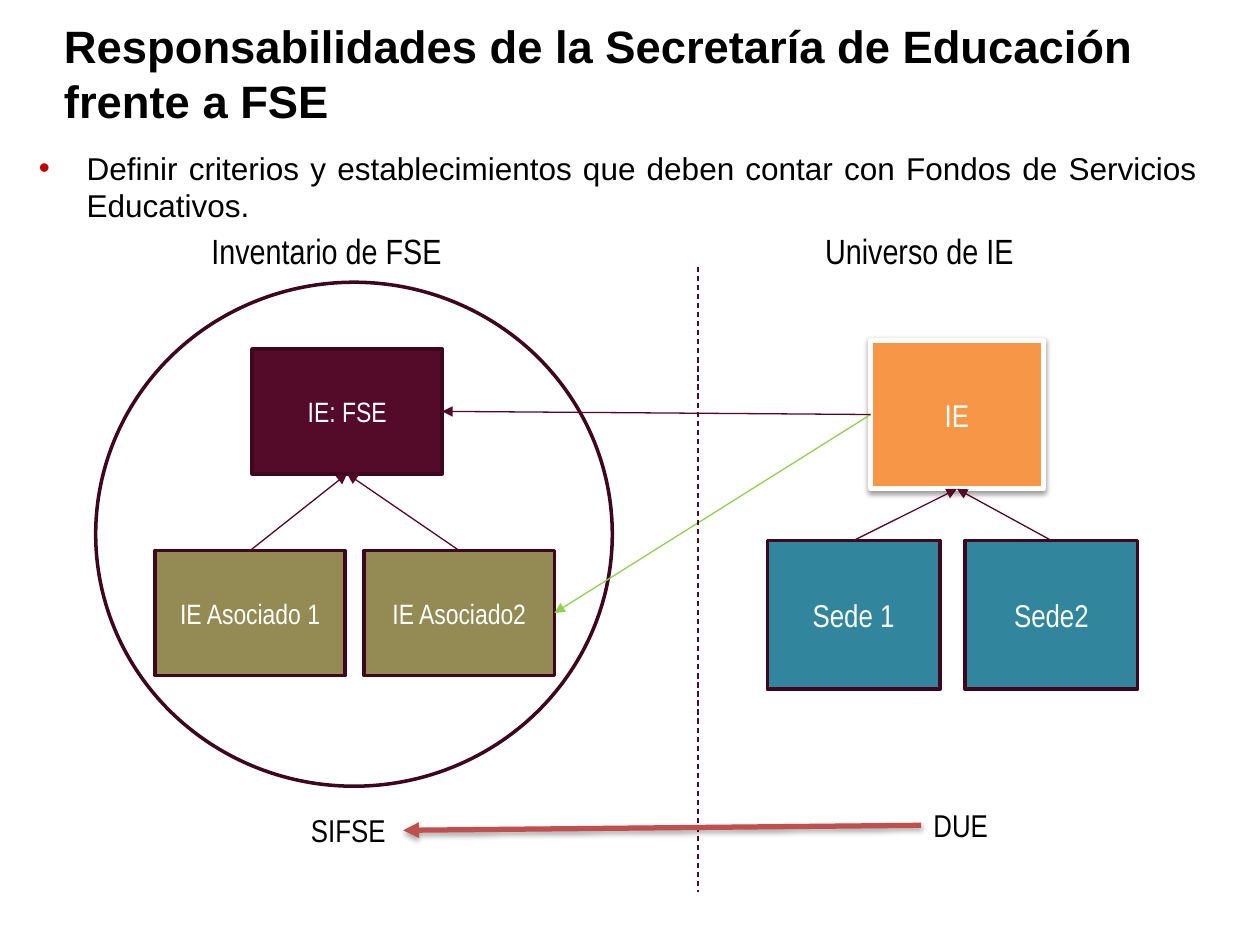
from lxml.etree import SubElement
from pptx import Presentation
from pptx.dml.color import RGBColor
from pptx.enum.dml import MSO_LINE
from pptx.enum.shapes import MSO_CONNECTOR, MSO_SHAPE
from pptx.enum.text import MSO_ANCHOR, PP_ALIGN
from pptx.oxml.ns import qn
from pptx.util import Inches, Pt

COLORS = {
    "black": "000000", "white": "FFFFFF", "bullet": "C00000",
    "wine": "540A29", "outline": "3E071E", "arrow": "540828",
    "olive": "948A54", "orange": "F79646", "teal": "31859C",
    "green": "92D050", "red": "C0504D",
}
TITLE = "Responsabilidades de la Secretaría de Educación frente a FSE"
CRITERIA = ("Definir criterios y establecimientos que deben contar con "
            "Fondos de Servicios Educativos.")

FUND_SIZE, SITE_SIZE = (1.51, 0.99), (1.37, 1.18)
# name: (text, left, top, size, fill, outline, outline width, font size)
BOXES = {
    "fund": ("IE: FSE", 2, 2.77, FUND_SIZE, "wine", "outline", 2, 16),
    "associate 2": ("IE Asociado2", 2.89, 4.37, FUND_SIZE, "olive", "outline", 2, 16),
    "associate 1": ("IE Asociado 1", 1.23, 4.37, FUND_SIZE, "olive", "outline", 2, 16),
    "school": ("IE", 6.91, 2.7, SITE_SIZE, "orange", "white", 3, 18),
    "site 1": ("Sede 1", 6.09, 4.29, SITE_SIZE, "teal", "outline", 2, 18),
    "site 2": ("Sede2", 7.66, 4.29, SITE_SIZE, "teal", "outline", 2, 18),
}
TOP, LEFT, BOTTOM, RIGHT = range(4)  # connection sites of a rectangle
LINKS = [
    ("associate 1", TOP, "fund", BOTTOM, "arrow"),
    ("associate 2", TOP, "fund", BOTTOM, "arrow"),
    ("school", LEFT, "associate 2", RIGHT, "green"),
    ("school", LEFT, "fund", RIGHT, "arrow"),
    ("site 1", TOP, "school", BOTTOM, "arrow"),
    ("site 2", TOP, "school", BOTTOM, "arrow"),
]
LABELS = [  # text, left, top, width, height, font size
    ("Universo de IE", 6.45, 1.77, 1.72, 0.44, 20),
    ("Inventario de FSE", 1.58, 1.77, 2.06, 0.44, 20),
    ("SIFSE", 2.37, 6.39, 0.83, 0.4, 18),
    ("DUE", 7.31, 6.35, 1.02, 0.4, 18),
]


def color(name):
    return RGBColor.from_string(COLORS[name])


def set_font(paragraph, name, size, shade="black", bold=False):
    font = paragraph.font
    font.name, font.size, font.bold = name, Pt(size), bold
    font.color.rgb = color(shade)


def set_line(shape, shade, width):
    shape.line.color.rgb = color(shade)
    shape.line.width = Pt(width)


def add_shadow(shape, opacity, distance):
    """Give the shape a soft shadow straight below it."""
    properties = shape._element.spPr
    effects = properties.find(qn("a:effectLst"))
    if effects is None:
        effects = SubElement(properties, qn("a:effectLst"))
    shadow = SubElement(effects, qn("a:outerShdw"), blurRad=str(Pt(3.1)),
                        dist=str(Pt(distance)), dir="5400000", rotWithShape="0")
    shade = SubElement(shadow, qn("a:srgbClr"), val=COLORS["black"])
    SubElement(shade, qn("a:alpha"), val=str(opacity * 1000))


def add_text(page, text, left, top, width, height):
    box = page.shapes.add_textbox(*map(Inches, (left, top, width, height)))
    box.text_frame.word_wrap = True
    para = box.text_frame.paragraphs[0]
    para.text = text
    return box, para


def add_bullet(para):
    properties = para._p.get_or_add_pPr()
    properties.set("marL", str(Inches(0.38)))
    properties.set("indent", str(Inches(-0.38)))
    bullet_color = SubElement(properties, qn("a:buClr"))
    SubElement(bullet_color, qn("a:srgbClr"), val=COLORS["bullet"])
    SubElement(properties, qn("a:buFont"), typeface="Arial")
    SubElement(properties, qn("a:buChar"), char="•")


def add_box(page, text, left, top, size, fill, outline, width, font_size):
    box = page.shapes.add_shape(MSO_SHAPE.RECTANGLE, *map(Inches, (left, top, *size)))
    box.shadow.inherit = False
    box.fill.solid()
    box.fill.fore_color.rgb = color(fill)
    set_line(box, outline, width)
    frame = box.text_frame
    frame.word_wrap = True
    frame.vertical_anchor = MSO_ANCHOR.MIDDLE
    frame.margin_left = frame.margin_right = Inches(0.07)
    frame.margin_top = frame.margin_bottom = Inches(0.04)
    para = frame.paragraphs[0]
    para.text = text
    para.alignment = PP_ALIGN.CENTER
    set_font(para, "Arial Narrow", font_size, "white")
    return box


def add_line(page, shade, width, start=(0, 0), end=(0, 0), arrow=True):
    line = page.shapes.add_connector(MSO_CONNECTOR.STRAIGHT, *map(Inches, (*start, *end)))
    set_line(line, shade, width)
    if arrow:
        SubElement(line.line._get_or_add_ln(), qn("a:tailEnd"), type="triangle")
    SubElement(line._element.spPr, qn("a:effectLst"))
    return line


def main():
    deck = Presentation()
    deck.slide_width, deck.slide_height = Inches(10), Inches(7.5)
    page = deck.slides.add_slide(deck.slide_layouts[6])

    title, para = add_text(page, TITLE, 0.41, 0.13, 9, 0.9)
    title.text_frame.vertical_anchor = MSO_ANCHOR.MIDDLE
    set_font(para, "Arial", 25.9, bold=True)

    _, para = add_text(page, CRITERIA, 0.21, 1.13, 9.39, 1.92)
    para.alignment = PP_ALIGN.JUSTIFY
    add_bullet(para)
    set_font(para, "Arial", 18)

    boxes = {name: add_box(page, *details) for name, details in BOXES.items()}
    add_shadow(boxes["school"], 38, 1.6)

    circle = page.shapes.add_shape(MSO_SHAPE.OVAL, *map(Inches, (0.76, 2.24, 4.1, 4)))
    circle.shadow.inherit = False
    circle.fill.background()
    set_line(circle, "outline", 2)

    for source, source_side, target, target_side, shade in LINKS:
        link = add_line(page, shade, 0.75)
        link.begin_connect(boxes[source], source_side)
        link.end_connect(boxes[target], target_side)

    for *place, size in LABELS:
        _, para = add_text(page, *place)
        set_font(para, "Arial Narrow", size)

    divider = add_line(page, "arrow", 0.75, (5.54, 2.12), (5.54, 7.08), arrow=False)
    divider.line.dash_style = MSO_LINE.DASH
    flow = add_line(page, "red", 3, (7.31, 6.55), (3.2, 6.59))
    add_shadow(flow, 35, 1.8)

    deck.save("out.pptx")


if __name__ == "__main__":
    main()
